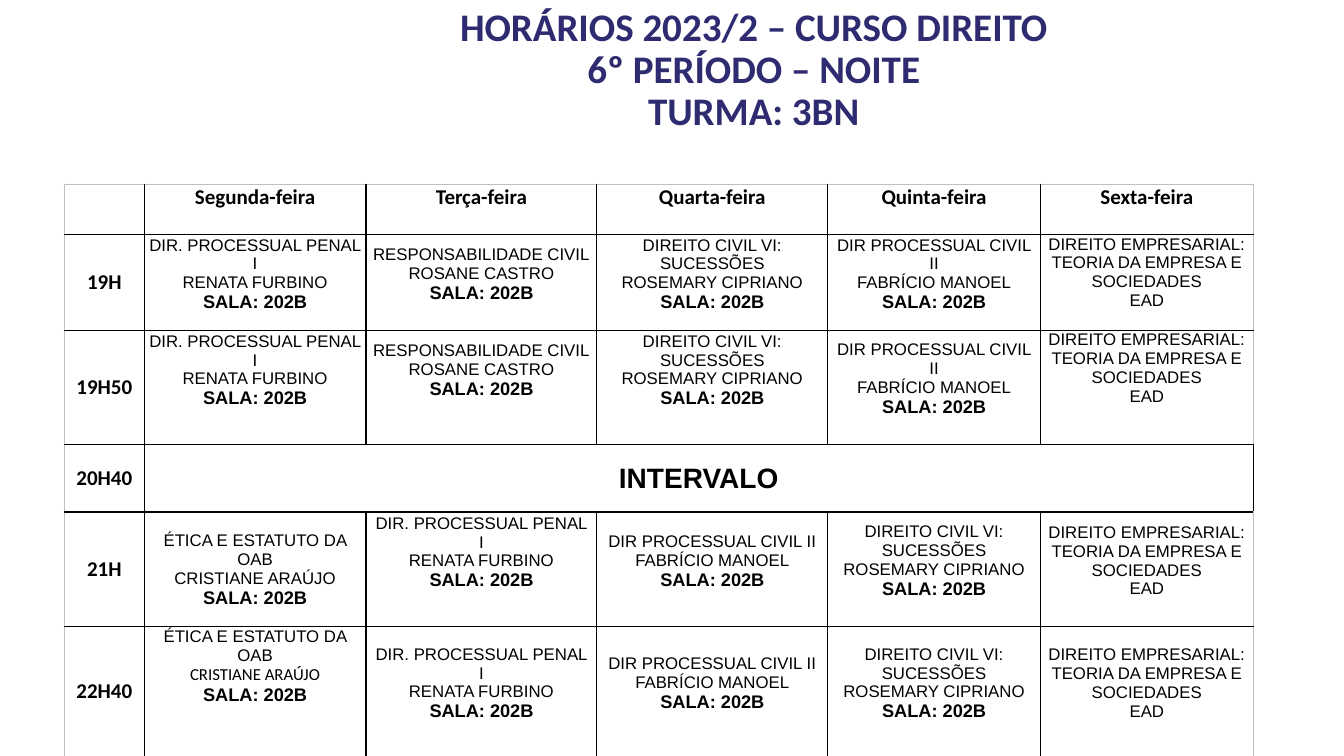
from lxml.etree import SubElement
from pptx import Presentation
from pptx.dml.color import RGBColor
from pptx.enum.text import MSO_ANCHOR, PP_ALIGN
from pptx.oxml.ns import qn
from pptx.util import Inches, Pt

COLORS = {"navy": "2E2B71", "black": "000000", "white": "FFFFFF", "edge": "BFBFBF"}


def style(par, size, bold, face="Arial", color="black"):
    par.alignment = PP_ALIGN.CENTER
    par.font.size = Pt(size)
    par.font.bold = bold
    par.font.name = face
    par.font.color.rgb = RGBColor.from_string(COLORS[color])


def border(cell, side, color):
    line = SubElement(cell._tc.get_or_add_tcPr(), qn("a:" + side), w=str(Pt(1)))
    fill = SubElement(line, qn("a:solidFill"))
    SubElement(fill, qn("a:srgbClr"), val=COLORS[color])


deck = Presentation()
deck.slide_width = Inches(13.33)
deck.slide_height = Inches(7.5)
slide = deck.slides.add_slide(deck.slide_layouts[5])

title = slide.shapes.title
title.left, title.top = Inches(3.28), Inches(0.21)
title.width, title.height = Inches(8.39), Inches(1.45)
frame = title.text_frame
frame.word_wrap = True
frame.vertical_anchor = MSO_ANCHOR.MIDDLE
frame.text = "HORÁRIOS 2023/2 – CURSO DIREITO\v6º PERÍODO – NOITE\vTURMA: 3BN\v"
style(frame.paragraphs[0], 27.9, True, "Calibri", "navy")
frame.paragraphs[0].line_spacing = 0.9

room = "SALA: 202B"
penal = ("DIR. PROCESSUAL PENAL I", "RENATA FURBINO", room)
duty = ("RESPONSABILIDADE CIVIL", "ROSANE CASTRO", room)
heirs = ("DIREITO CIVIL VI: SUCESSÕES", "ROSEMARY CIPRIANO", room)
civil = ("DIR PROCESSUAL CIVIL II", "FABRÍCIO MANOEL", room)
firm = ("DIREITO EMPRESARIAL:", "TEORIA DA EMPRESA E SOCIEDADES", "EAD")
ethics = ("ÉTICA E ESTATUTO DA OAB", "CRISTIANE ARAÚJO", room)

days = ["Segunda-feira", "Terça-feira", "Quarta-feira", "Quinta-feira", "Sexta-feira"]
early = [penal, duty, heirs, civil, firm]
late = [ethics, penal, civil, heirs, firm]
hours = [
    ("19H", early, [1, 1, 1, 1, 0]),
    ("19H50", early, [2, 2, 2, 1, 0]),
    ("20H40", [("INTERVALO",)], [0]),
    ("21H", late, [0, 2, 1, 1, 1]),
    ("22H40", late, [3, 1, 1, 1, 1]),
]
widths = [0.79, 2.2, 2.29, 2.29, 2.11, 2.11]
heights = [0.5, 0.95, 1.13, 0.67, 1.14, 1.26]
rows, cols = len(heights), len(widths)
step = 0.17

table = slide.shapes.add_table(
    rows, cols, Inches(0.64), Inches(1.83), Inches(sum(widths)), Inches(sum(heights))
).table
table.first_row = False
table.horz_banding = False
for col, width in zip(table.columns, widths):
    col.width = Inches(width)
for row, height in zip(table.rows, heights):
    row.height = Inches(height)

for r in range(rows):
    for c in range(cols):
        cell = table.cell(r, c)
        cell.margin_left = cell.margin_right = Inches(0.05)
        cell.margin_top = cell.margin_bottom = 0
        cell.vertical_anchor = MSO_ANCHOR.MIDDLE if r else MSO_ANCHOR.TOP
        border(cell, "lnL", "black" if c else "edge")
        border(cell, "lnR", "black" if c < cols - 1 else "edge")
        border(cell, "lnT", "black" if r else "edge")
        border(cell, "lnB", "black" if r < rows - 1 else "edge")
        cell.fill.solid()
        cell.fill.fore_color.rgb = RGBColor.from_string(COLORS["white"])

for c, day in enumerate(days, 1):
    cell = table.cell(0, c)
    cell.text = day
    style(cell.text_frame.paragraphs[0], 15, True, "Calibri")

for r, (hour, items, gaps) in enumerate(hours, 1):
    label = table.cell(r, 0)
    label.text = hour
    style(label.text_frame.paragraphs[0], 15, True, "Calibri")
    for c, (lines, gap) in enumerate(zip(items, gaps), 1):
        cell = table.cell(r, c)
        cell.text = "\n".join(lines)
        cell.margin_bottom = Inches(gap * step)
        if lines == firm and not gap:
            cell.vertical_anchor = MSO_ANCHOR.TOP
        for par in cell.text_frame.paragraphs:
            bold = par.text == room
            style(par, 13 if bold else 12, bold)

pause = table.cell(3, 1)
pause.merge(table.cell(3, 5))
style(pause.text_frame.paragraphs[0], 20, True)
table.cell(5, 1).text_frame.paragraphs[1].font.name = "Calibri"

deck.save("out.pptx")
